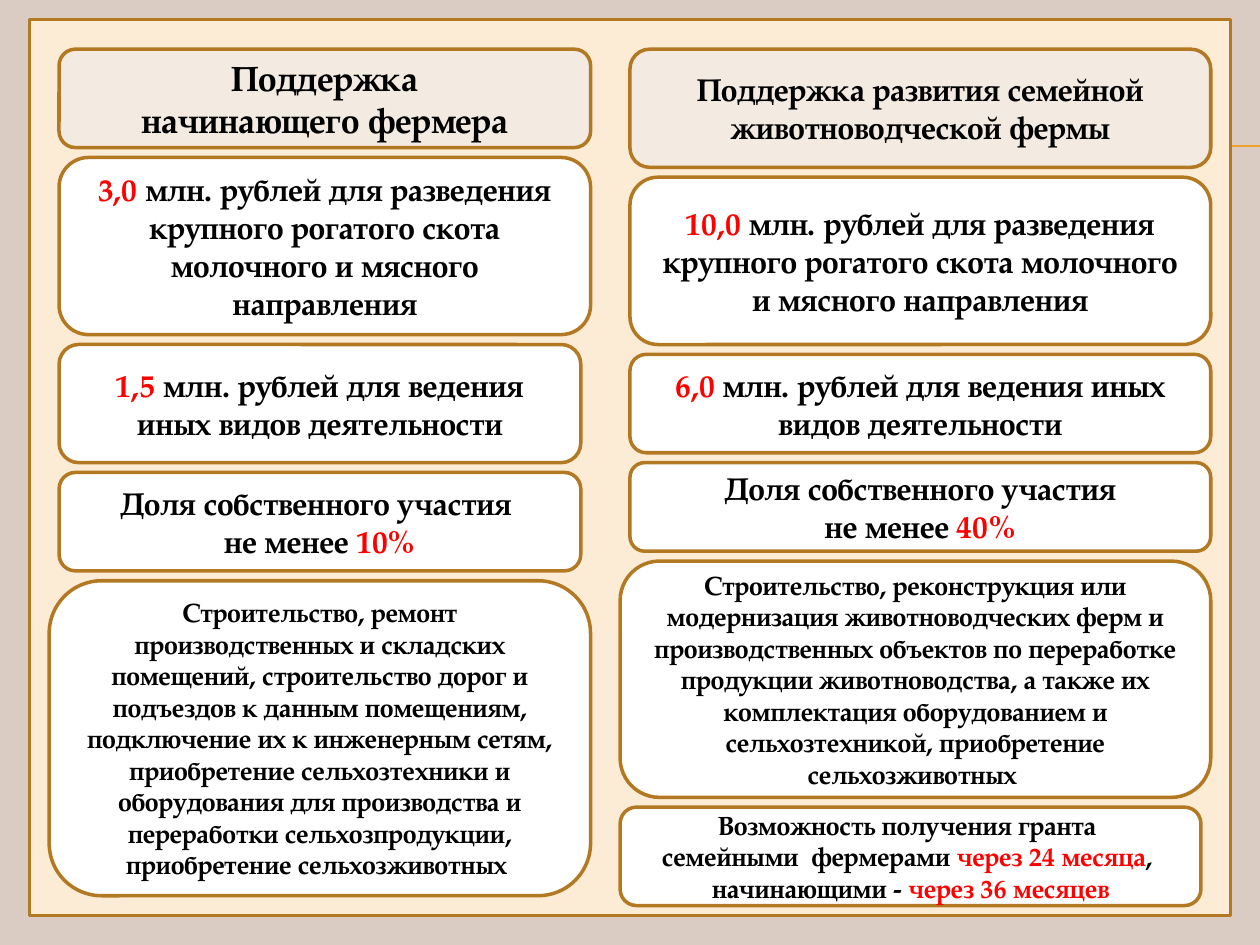
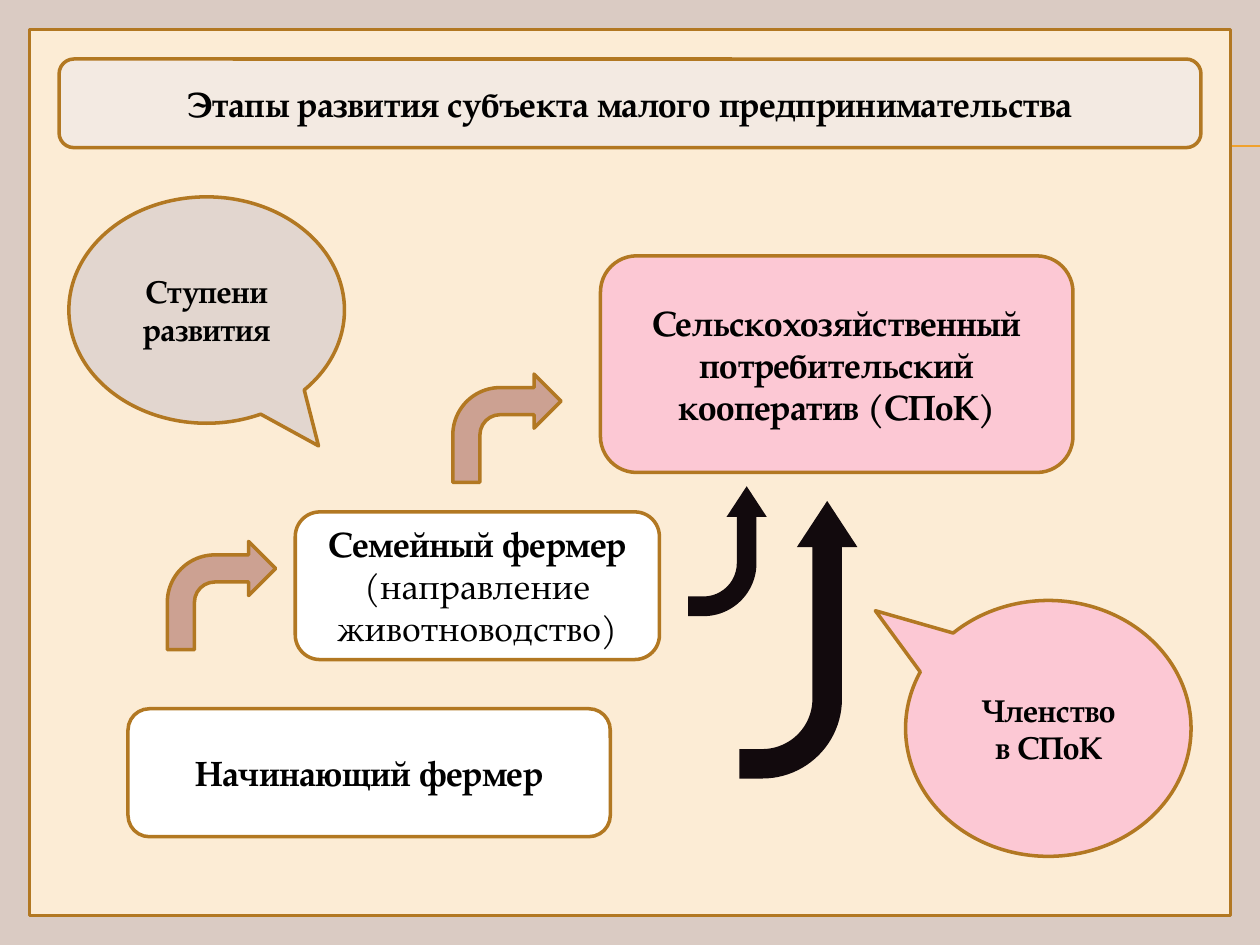
from pptx import Presentation
from pptx.dml.color import RGBColor
from pptx.enum.shapes import MSO_CONNECTOR, MSO_SHAPE
from pptx.enum.text import MSO_ANCHOR, MSO_AUTO_SIZE, PP_ALIGN
from pptx.oxml.ns import qn
from pptx.util import Inches, Pt
from lxml import etree

RECT, ROUND = MSO_SHAPE.RECTANGLE, MSO_SHAPE.ROUNDED_RECTANGLE
BENT, BUBBLE = MSO_SHAPE.BENT_ARROW, MSO_SHAPE.OVAL_CALLOUT
STRAIGHT = MSO_CONNECTOR.STRAIGHT
MIDDLE, CENTER, FIXED = MSO_ANCHOR.MIDDLE, PP_ALIGN.CENTER, MSO_AUTO_SIZE.NONE
WIDE, HIGH, COLS = 10, 7.5, 128
TITLED, BLANK = 5, 6
FONT = "TeX Gyre Pagella"
HUES = {
    "back": "DACBC3", "panel": "FCECD5", "edge": "B27822", "rule": "F0A22E",
    "head": "F3EAE2", "white": "FFFFFF", "pink": "FCC8D4", "clay": "CCA192",
    "sand": "E2D6CF", "dark": "120A0D", "text": "000000", "red": "FF0000",
}

LEFT = [
    (6, 54, 10, 20, "Поддержка\nначинающего фермера"),
    (6, 54, 18, 18, "*3,0* млн. рублей для разведения крупного рогатого скота "
                    "молочного и мясного направления"),
    (6, 53, 12, 18, "*1,5 *млн. рублей для ведения иных видов деятельности"),
    (6, 53, 10, 18, "Доля собственного участия \nне менее *10%*"),
    (5, 55, 32, 15, "Строительство, ремонт производственных и складских помещений, "
                    "строительство дорог и подъездов к данным помещениям, "
                    "подключение их к инженерным сетям, приобретение сельхозтехники "
                    "и оборудования для производства и переработки "
                    "сельхозпродукции, приобретение сельхозживотных "),
]
RIGHT = [
    (64, 59, 12, 18, "Поддержка развития семейной животноводческой фермы"),
    (64, 59, 17, 18, "*10,0* млн. рублей для разведения крупного рогатого скота "
                     "молочного и мясного направления"),
    (64, 59, 10, 18, "*6,0* млн. рублей для ведения иных видов деятельности"),
    (64, 59, 9, 18, "Доля собственного участия\nне менее *40%*"),
    (63, 60, 24, 15, "Строительство, реконструкция или модернизация животноводческих "
                     "ферм и производственных объектов по переработке продукции "
                     "животноводства, а также их комплектация оборудованием и "
                     "сельхозтехникой, приобретение сельхозживотных "),
    (63, 59, 10, 15, "Возможность получения гранта \nсемейными  фермерами "
                     "*через 24 месяца*, \nначинающими - *через 36 месяцев*"),
]


class Deck:
    """Draw styled elements on a grid of 128 columns by 96 rows."""

    def __init__(self):
        self.prs = Presentation()
        self.prs.slide_width, self.prs.slide_height = Inches(WIDE), Inches(HIGH)
        self.paint(self.prs.slide_master.background.fill, "back")

    def unit(self, count):
        return Inches(count * WIDE / COLS)

    def hue(self, name):
        return RGBColor.from_string(HUES[name])

    def paint(self, fill, name):
        fill.solid()
        fill.fore_color.rgb = self.hue(name)

    def page(self, layout, top, rows):
        self.slide = self.prs.slides.add_slide(self.prs.slide_layouts[layout])
        for row in (14.75, 14.85):
            self.rule(7, row, COLS)
        self.shape(RECT, (3, top, 122, rows), "panel")

    def rule(self, start, row, end):
        ends = [self.unit(n) for n in (start, row, end, row)]
        line = self.slide.shapes.add_connector(STRAIGHT, *ends)
        line.line.color.rgb = self.hue("rule")
        line.line.width = Pt(0.75)
        etree.SubElement(line._element.spPr, qn("a:effectLst"))

    def shape(self, kind, area, fill, edge="edge", bends=()):
        item = self.slide.shapes.add_shape(kind, *map(self.unit, area))
        item.shadow.inherit = False
        self.paint(item.fill, fill)
        if edge:
            item.line.color.rgb = self.hue(edge)
            item.line.width = Pt(2)
        else:
            item.line.fill.background()
        for spot, value in enumerate(bends):
            item.adjustments[spot] = value
        return item

    def label(self, item, text, size, mark="red"):
        frame = item.text_frame
        frame.word_wrap, frame.auto_size = True, FIXED
        frame.vertical_anchor = MIDDLE
        frame.text = text.replace("*", "")
        for para, line in zip(frame.paragraphs, text.split("\n")):
            para.text = ""
            para.alignment = CENTER
            for spot, part in enumerate(line.split("*")):
                if part:
                    self.piece(para, part, size, mark if spot % 2 else "bold")

    def piece(self, para, text, size, look):
        run = para.add_run()
        run.text = text
        font = run.font
        font.name, font.size, font.bold = FONT, Pt(size), look != "plain"
        font.color.rgb = self.hue("red" if look == "red" else "text")

    def card(self, area, text, size=20, fill="white", mark="red"):
        self.label(self.shape(ROUND, area, fill), text, size, mark)

    def stack(self, cards, top=5, gap=1):
        for spot, (left, cols, rows, size, text) in enumerate(cards):
            self.card((left, top, cols, rows), text, size, "white" if spot else "head")
            top += rows + gap

    def title(self, area, text):
        self.shape(ROUND, area, "head")
        item = self.slide.shapes.title
        item.left, item.top, item.width, item.height = map(self.unit, area)
        self.label(item, text, 20)
        self.slide.shapes._spTree.append(item._element)

    def bubble(self, area, text, fill, tail):
        self.label(self.shape(BUBBLE, area, fill, bends=tail), text, 18)

    def rise(self, area):
        item = self.shape(BENT, area, "dark", None, (0.25, 0.256, 0.39, 0.674))
        item.rotation = 270
        item._element.spPr.find(qn("a:xfrm")).set("flipV", "1")


def main():
    deck = Deck()
    deck.page(BLANK, 2, 91)
    for cards in (LEFT, RIGHT):
        deck.stack(cards)

    deck.page(TITLED, 3, 90)
    deck.title((6, 6, 116, 9), "Этапы развития субъекта малого предпринимательства")
    deck.card((13, 72, 49, 13), "Начинающий фермер")
    deck.card((30, 52, 37, 15), "Семейный фермер *(направление животноводство)*",
              mark="plain")
    deck.card((61, 26, 48, 22), "Сельскохозяйственный потребительский кооператив (СПоК)",
              fill="pink")
    for left, top in ((17, 55), (46, 38)):
        deck.shape(BENT, (left, top, 11, 11), "clay")
    deck.rise((67, 59, 28.2, 12))
    deck.rise((67.3, 52, 13.2, 8))
    deck.bubble((7, 20, 28, 23), "Ступени развития", "sand", (0.406, 0.6))
    deck.bubble((92, 61, 29, 26), "Членство\nв СПоК", "pink", (-0.606, -0.46))
    deck.prs.save("out.pptx")


if __name__ == "__main__":
    main()
